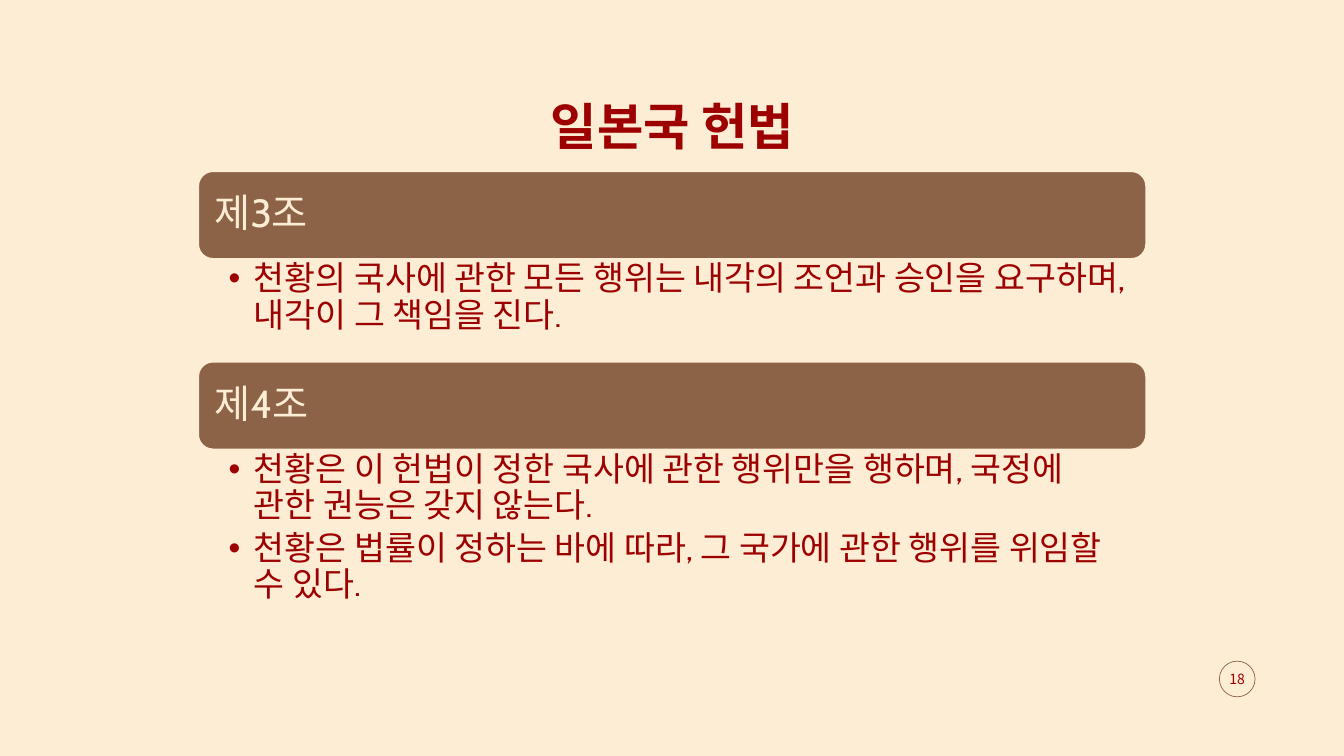
from lxml.etree import SubElement
from pptx import Presentation
from pptx.dml.color import RGBColor
from pptx.enum.shapes import MSO_SHAPE
from pptx.enum.text import MSO_ANCHOR, MSO_AUTO_SIZE, PP_ALIGN
from pptx.oxml.ns import qn
from pptx.util import Cm, Pt

COLORS = {"background": "FCEDD4", "bar": "8D6347", "text": "9D0000"}
KOREAN_FONT = "Noto Sans CJK KR"
LEFT, WIDTH, BAR_HEIGHT = Cm(5), Cm(23.88), Cm(2.2)

ARTICLES = [
    ("제3조", Cm(4.32), Cm(2.6), [
        "천황의 국사에 관한 모든 행위는 내각의 조언과 승인을 요구하며, 내각이 그 책임을 진다.",
    ]),
    ("제4조", Cm(9.12), Cm(5.28), [
        "천황은 이 헌법이 정한 국사에 관한 행위만을 행하며, 국정에 관한 권능은 갖지 않는다.",
        "천황은 법률이 정하는 바에 따라, 그 국가에 관한 행위를 위임할 수 있다.",
    ]),
]


def color(name):
    return RGBColor.from_string(COLORS[name])


def apply_format(target, values):
    for name, value in values.items():
        setattr(target, name, value)


def place(shape, left, top, width, height):
    apply_format(shape, {"left": left, "top": top, "width": width, "height": height})


def format_frame(frame, anchor, insets):
    """Insets run left, top, right, bottom."""
    sides = ("margin_left", "margin_top", "margin_right", "margin_bottom")
    apply_format(frame, {"word_wrap": True, "auto_size": MSO_AUTO_SIZE.NONE,
                         "vertical_anchor": anchor, **dict(zip(sides, insets))})


def write(paragraph, text, size, tone, latin, bold=False, **layout):
    run = paragraph.add_run()
    run.text = text
    run.font.color.rgb = color(tone)
    apply_format(run.font, {"size": Pt(size), "name": latin, "bold": bold})
    SubElement(run.font._element, qn("a:ea"), typeface=KOREAN_FONT)
    apply_format(paragraph, {"space_before": Pt(0), **layout})


def add_bullet(paragraph):
    properties = paragraph._p.get_or_add_pPr()
    properties.set("marL", str(Cm(0.64)))
    properties.set("indent", str(-Cm(0.64)))
    SubElement(properties, qn("a:buChar"), char="•")


def add_outlined(slide, preset, box, line_tone, line_width):
    shape = slide.shapes.add_shape(preset, *box)
    shape.shadow.inherit = False
    shape.fill.background()
    shape.line.color.rgb = color(line_tone)
    shape.line.width = Pt(line_width)
    return shape


def set_title(slide, text):
    title = slide.shapes.title
    place(title, Cm(2.34), Cm(2.11), Cm(29.21), Cm(1.96))
    format_frame(title.text_frame, MSO_ANCHOR.BOTTOM, (Cm(0.25), Cm(0.13)) * 2)
    write(title.text_frame.paragraphs[0], text, 36, "text", KOREAN_FONT, bold=True,
          alignment=PP_ALIGN.CENTER, line_spacing=0.9)


def add_heading(slide, text, top):
    bar = add_outlined(slide, MSO_SHAPE.ROUNDED_RECTANGLE,
                       (LEFT, top, WIDTH, BAR_HEIGHT), "background", 1)
    bar.fill.solid()
    bar.fill.fore_color.rgb = color("bar")
    format_frame(bar.text_frame, MSO_ANCHOR.MIDDLE, [Cm(0.3)] * 4)
    write(bar.text_frame.paragraphs[0], text, 28, "background", "Cabin",
          alignment=PP_ALIGN.LEFT, line_spacing=0.9)


def fill_clauses(body, clauses, top, height):
    place(body, LEFT, top, WIDTH, height)
    frame = body.text_frame
    format_frame(frame, MSO_ANCHOR.TOP, (Cm(0.76), Cm(0.08), Cm(0.48), Cm(0.08)))
    for index, clause in enumerate(clauses):
        paragraph = frame.add_paragraph() if index else frame.paragraphs[0]
        write(paragraph, clause, 24, "text", "Cabin", alignment=PP_ALIGN.LEFT,
              line_spacing=0.9, space_after=Pt(4.8))
        add_bullet(paragraph)


def add_page_number(slide, number):
    badge = add_outlined(slide, MSO_SHAPE.OVAL,
                         (Cm(30.73), Cm(16.66), Cm(0.9), Cm(0.9)), "bar", 0.5)
    format_frame(badge.text_frame, MSO_ANCHOR.MIDDLE, [Cm(0)] * 4)
    badge.text_frame.word_wrap = False
    write(badge.text_frame.paragraphs[0], number, 10, "text", KOREAN_FONT,
          alignment=PP_ALIGN.CENTER)


def main():
    deck = Presentation()
    apply_format(deck, {"slide_width": Cm(33.87), "slide_height": Cm(19.05)})
    slide = deck.slides.add_slide(deck.slide_layouts.get_by_name("Two Content"))
    slide.background.fill.solid()
    slide.background.fill.fore_color.rgb = color("background")

    set_title(slide, "일본국 헌법")
    bodies = list(slide.placeholders)[1:]
    for body, (heading, top, height, clauses) in zip(bodies, ARTICLES):
        add_heading(slide, heading, top)
        fill_clauses(body, clauses, top + BAR_HEIGHT, height)
    add_page_number(slide, "18")
    deck.save("out.pptx")


if __name__ == "__main__":
    main()
